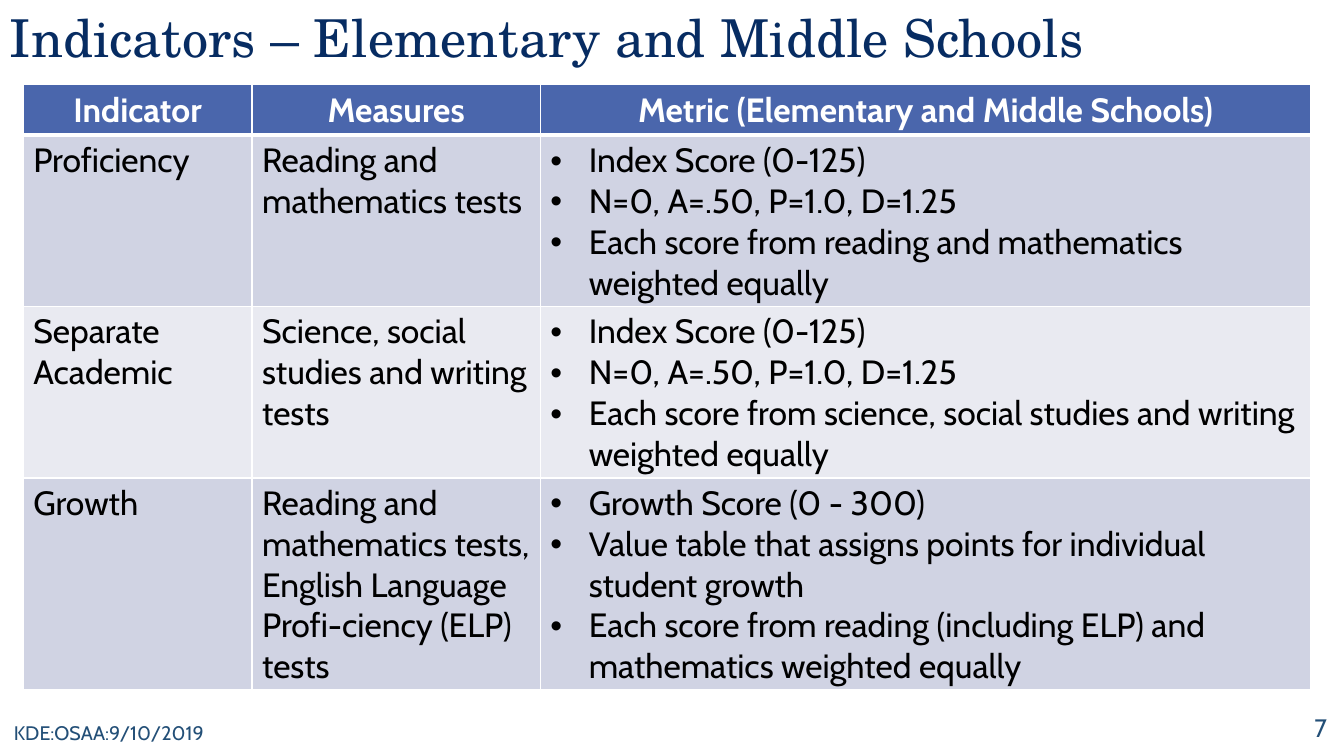
from lxml.etree import SubElement
from pptx import Presentation
from pptx.dml.color import RGBColor
from pptx.enum.text import MSO_ANCHOR as Anchor, PP_ALIGN as Align
from pptx.oxml.ns import qn
from pptx.util import Inches, Pt

NAVY = RGBColor(0x07, 0x2C, 0x62)
STEEL = RGBColor(0x23, 0x4F, 0x77)
BLUE = RGBColor(0x4A, 0x66, 0xAC)
BAND_DARK = RGBColor(0xD0, 0xD3, 0xE3)
BAND_LIGHT = RGBColor(0xE9, 0xEA, 0xF1)
WHITE = RGBColor(0xFF, 0xFF, 0xFF)
BLACK = RGBColor(0, 0, 0)

COLUMN_WIDTHS = [2.27, 2.86, 7.64]
ROW_HEIGHTS = [0.5, 1.7, 1.7, 2.1]
HEADINGS = ["Indicator", "Measures", "Metric (Elementary and Middle Schools)"]
INDICATORS = [
    ("Proficiency", "Reading and mathematics tests", [
        "Index Score (0-125)",
        "N=0, A=.50, P=1.0, D=1.25",
        "Each score from reading and mathematics weighted equally"]),
    ("Separate Academic", "Science, social studies and writing tests", [
        "Index Score (0-125)",
        "N=0, A=.50, P=1.0, D=1.25",
        "Each score from science, social studies and writing weighted equally"]),
    ("Growth", "Reading and mathematics tests, English Language Profi-ciency (ELP) tests", [
        "Growth Score (0 - 300)",
        "Value table that assigns points for individual student growth",
        "Each score from reading (including ELP) and mathematics weighted equally"]),
]


def write(para, text, color, size, name="Cabin", bold=False, align=Align.LEFT):
    para.alignment = align
    span = para.add_run()
    span.text = text
    span.font.color.rgb = color
    for key, value in {"size": Pt(size), "name": name, "bold": bold}.items():
        setattr(span.font, key, value)


def add_label(page, box, text, color, size, anchor=Anchor.MIDDLE, **style):
    frame = page.shapes.add_textbox(*map(Inches, box)).text_frame
    frame.word_wrap = True
    frame.vertical_anchor = anchor
    write(frame.paragraphs[0], text, color, size, **style)


def add_bullet(para):
    props = para._p.get_or_add_pPr()
    props.set("marL", str(Inches(0.38)))
    props.set("indent", str(-Inches(0.38)))
    SubElement(props, qn("a:buFont"), typeface="Arial")
    SubElement(props, qn("a:buChar"), char="•")


def outline(cell, bottom):
    """Draw white cell borders, 1 pt except for the given bottom width."""
    props = cell._tc.get_or_add_tcPr()
    for side, points in {"L": 1, "R": 1, "T": 1, "B": bottom}.items():
        line = SubElement(props, qn(f"a:ln{side}"), w=str(Pt(points)))
        fill = SubElement(line, qn("a:solidFill"))
        SubElement(fill, qn("a:srgbClr"), val=str(WHITE))


def fill_cell(cell, content, fill, header=False):
    """Write text, or a list of bullets, into a bordered and filled cell."""
    outline(cell, 3 if header else 1)
    cell.fill.solid()
    cell.fill.fore_color.rgb = fill
    frame = cell.text_frame
    bulleted = isinstance(content, list)
    for index, text in enumerate(content if bulleted else [content]):
        para = frame.add_paragraph() if index else frame.paragraphs[0]
        if bulleted:
            add_bullet(para)
        write(para, text, WHITE if header else BLACK, 24, bold=header,
              align=Align.CENTER if header else Align.LEFT)


def add_indicator_table(page, left, top):
    rows = [HEADINGS, *INDICATORS]
    table = page.shapes.add_table(
        len(rows), len(HEADINGS), Inches(left), Inches(top),
        Inches(sum(COLUMN_WIDTHS)), Inches(sum(ROW_HEIGHTS))).table
    for column, width in zip(table.columns, COLUMN_WIDTHS):
        column.width = Inches(width)
    for row, height in zip(table.rows, ROW_HEIGHTS):
        row.height = Inches(height)
    for r, contents in enumerate(rows):
        fill = BLUE if r == 0 else BAND_DARK if r % 2 else BAND_LIGHT
        for c, content in enumerate(contents):
            fill_cell(table.cell(r, c), content, fill, header=r == 0)


def add_footer(page, top, height):
    add_label(page, (0.04, top, 4.5, height), "KDE:OSAA:9/10/2019", STEEL, 14)
    add_label(page, (12.51, top - 0.05, 0.75, height), "7", STEEL, 18, align=Align.RIGHT)


def main():
    deck = Presentation()
    deck.slide_width, deck.slide_height = Inches(13.33), Inches(7.5)
    page = deck.slides.add_slide(deck.slide_layouts[6])
    add_label(page, (0, 0, 13.11, 0.64), "Indicators – Elementary and Middle Schools",
              NAVY, 37.3, anchor=Anchor.TOP, name="TeX Gyre Schola")
    add_indicator_table(page, 0.23, 0.84)
    add_footer(page, 7.07, 0.4)
    deck.save("out.pptx")


if __name__ == "__main__":
    main()
